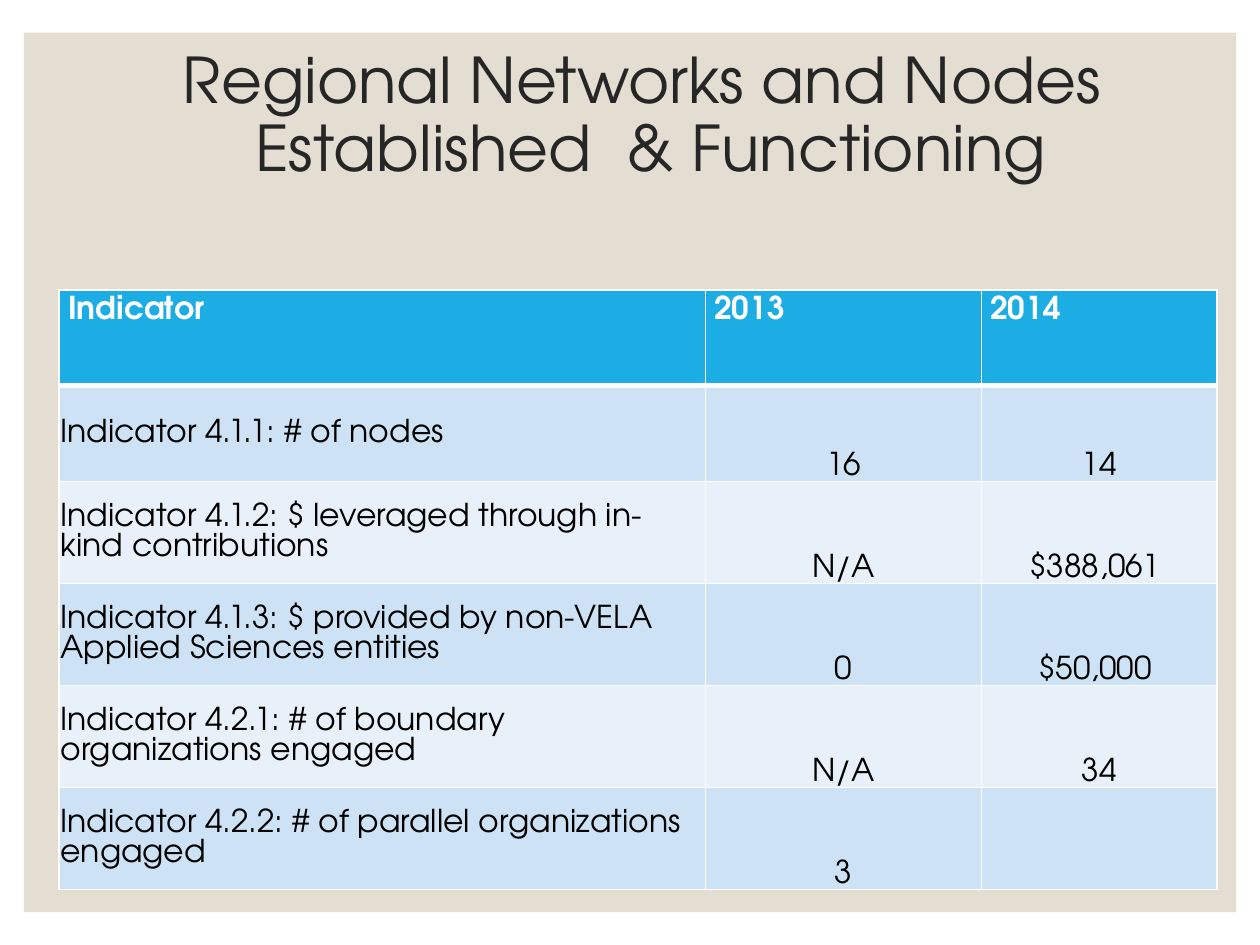
from typing import NamedTuple

from lxml.etree import SubElement
from pptx import Presentation
from pptx.dml.color import RGBColor
from pptx.enum.shapes import MSO_SHAPE
from pptx.enum.text import MSO_ANCHOR, PP_ALIGN
from pptx.oxml.ns import qn
from pptx.util import Inches, Pt

FONT_NAME = "TeX Gyre Adventor"
WHITE = RGBColor(0xFF, 0xFF, 0xFF)
BLACK = RGBColor(0x00, 0x00, 0x00)
TITLE_GRAY = RGBColor(0x26, 0x26, 0x26)
PANEL_BEIGE = RGBColor(0xE3, 0xDE, 0xD1)
HEADER_BLUE = RGBColor(0x1C, 0xAD, 0xE4)
BAND_COLORS = (RGBColor(0xCD, 0xE3, 0xF5), RGBColor(0xE8, 0xF1, 0xFA))

TITLE_LINES = ("Regional Networks and Nodes ", "Established  & Functioning")
COLUMN_WIDTHS = (5.13, 2.19, 1.87)
ROW_HEIGHTS = (0.76, 0.76, 0.81, 0.81, 0.81, 0.81)


class Indicator(NamedTuple):
    label: str
    year_2013: str
    year_2014: str


class CellStyle(NamedTuple):
    font: dict
    layout: dict
    alignment: PP_ALIGN
    bottom_border: float = 1


HEADINGS = Indicator("Indicator", "2013", "2014")
INDICATORS = (
    Indicator("Indicator 4.1.1: # of nodes", "16", "14"),
    Indicator("Indicator 4.1.2: $ leveraged through in-kind contributions", "N/A", "$388,061 "),
    Indicator("Indicator 4.1.3: $ provided by non-VELA Applied Sciences entities", "0", "$50,000 "),
    Indicator("Indicator 4.2.1: # of boundary organizations engaged", "N/A", "34"),
    Indicator("Indicator 4.2.2: # of parallel organizations engaged", "3", ""),
)

TITLE_FONT = {"name": FONT_NAME, "size": Pt(36)}
BODY_FONT = {"name": FONT_NAME, "size": Pt(18), "bold": False}
HEADER_LAYOUT = {
    "margin_left": Inches(0.07),
    "margin_top": Inches(0.05),
    "margin_right": Inches(0.07),
    "margin_bottom": Inches(0.05),
    "vertical_anchor": MSO_ANCHOR.TOP,
}
BODY_LAYOUT = {
    "margin_left": Inches(0.01),
    "margin_top": Inches(0.01),
    "margin_right": Inches(0.01),
    "margin_bottom": 0,
}
HEADER_STYLE = CellStyle(BODY_FONT | {"bold": True}, HEADER_LAYOUT, PP_ALIGN.LEFT, 3)
LABEL_STYLE = CellStyle(
    BODY_FONT, BODY_LAYOUT | {"vertical_anchor": MSO_ANCHOR.MIDDLE}, PP_ALIGN.LEFT
)
VALUE_STYLE = CellStyle(
    BODY_FONT, BODY_LAYOUT | {"vertical_anchor": MSO_ANCHOR.BOTTOM}, PP_ALIGN.CENTER
)


def apply_format(target, values: dict) -> None:
    for name, value in values.items():
        setattr(target, name, value)


def add_panel(slide) -> None:
    panel = slide.shapes.add_shape(
        MSO_SHAPE.RECTANGLE, Inches(0.19), Inches(0.26), Inches(9.62), Inches(6.98)
    )
    panel.shadow.inherit = False
    panel.fill.solid()
    panel.fill.fore_color.rgb = PANEL_BEIGE
    panel.line.fill.background()


def add_title(slide) -> None:
    title = slide.shapes.add_textbox(Inches(0.66), Inches(0.34), Inches(9.01), Inches(1.5))
    frame = title.text_frame
    frame.word_wrap = True
    frame.text = "\n".join(TITLE_LINES)
    for paragraph in frame.paragraphs:
        apply_format(paragraph, {"alignment": PP_ALIGN.CENTER, "line_spacing": 0.9})
        apply_format(paragraph.font, TITLE_FONT)
        paragraph.font.color.rgb = TITLE_GRAY


def set_borders(cell, bottom_width: float) -> None:
    properties = cell._tc.get_or_add_tcPr()
    widths = {"a:lnL": 1, "a:lnR": 1, "a:lnT": 1, "a:lnB": bottom_width}
    for position, (tag, width) in enumerate(widths.items()):
        line = SubElement(properties, qn(tag), w=str(Pt(width)))
        fill = SubElement(line, qn("a:solidFill"))
        SubElement(fill, qn("a:srgbClr"), val=str(WHITE))
        properties.insert(position, line)


def fill_cell(cell, text: str, style: CellStyle, fill: RGBColor, color: RGBColor) -> None:
    cell.text = text
    apply_format(cell, style.layout)
    cell.fill.solid()
    cell.fill.fore_color.rgb = fill
    paragraph = cell.text_frame.paragraphs[0]
    paragraph.alignment = style.alignment
    apply_format(paragraph.font, style.font)
    paragraph.font.color.rgb = color
    set_borders(cell, style.bottom_border)


def add_indicator_table(slide) -> None:
    table = slide.shapes.add_table(
        len(ROW_HEIGHTS), len(COLUMN_WIDTHS),
        Inches(0.47), Inches(2.3), Inches(sum(COLUMN_WIDTHS)), Inches(sum(ROW_HEIGHTS)),
    ).table
    for column, width in zip(table.columns, COLUMN_WIDTHS):
        column.width = Inches(width)
    for row, height in zip(table.rows, ROW_HEIGHTS):
        row.height = Inches(height)
    for cell, heading in zip(table.rows[0].cells, HEADINGS):
        fill_cell(cell, heading, HEADER_STYLE, HEADER_BLUE, WHITE)
    for index, indicator in enumerate(INDICATORS):
        cells = table.rows[index + 1].cells
        styles = (LABEL_STYLE, VALUE_STYLE, VALUE_STYLE)
        for cell, text, style in zip(cells, indicator, styles):
            fill_cell(cell, text, style, BAND_COLORS[index % 2], BLACK)


def main() -> None:
    presentation = Presentation()
    presentation.slide_width = Inches(10)
    presentation.slide_height = Inches(7.5)
    slide = presentation.slides.add_slide(presentation.slide_layouts[6])
    add_panel(slide)
    add_title(slide)
    add_indicator_table(slide)
    presentation.save("out.pptx")


if __name__ == "__main__":
    main()
